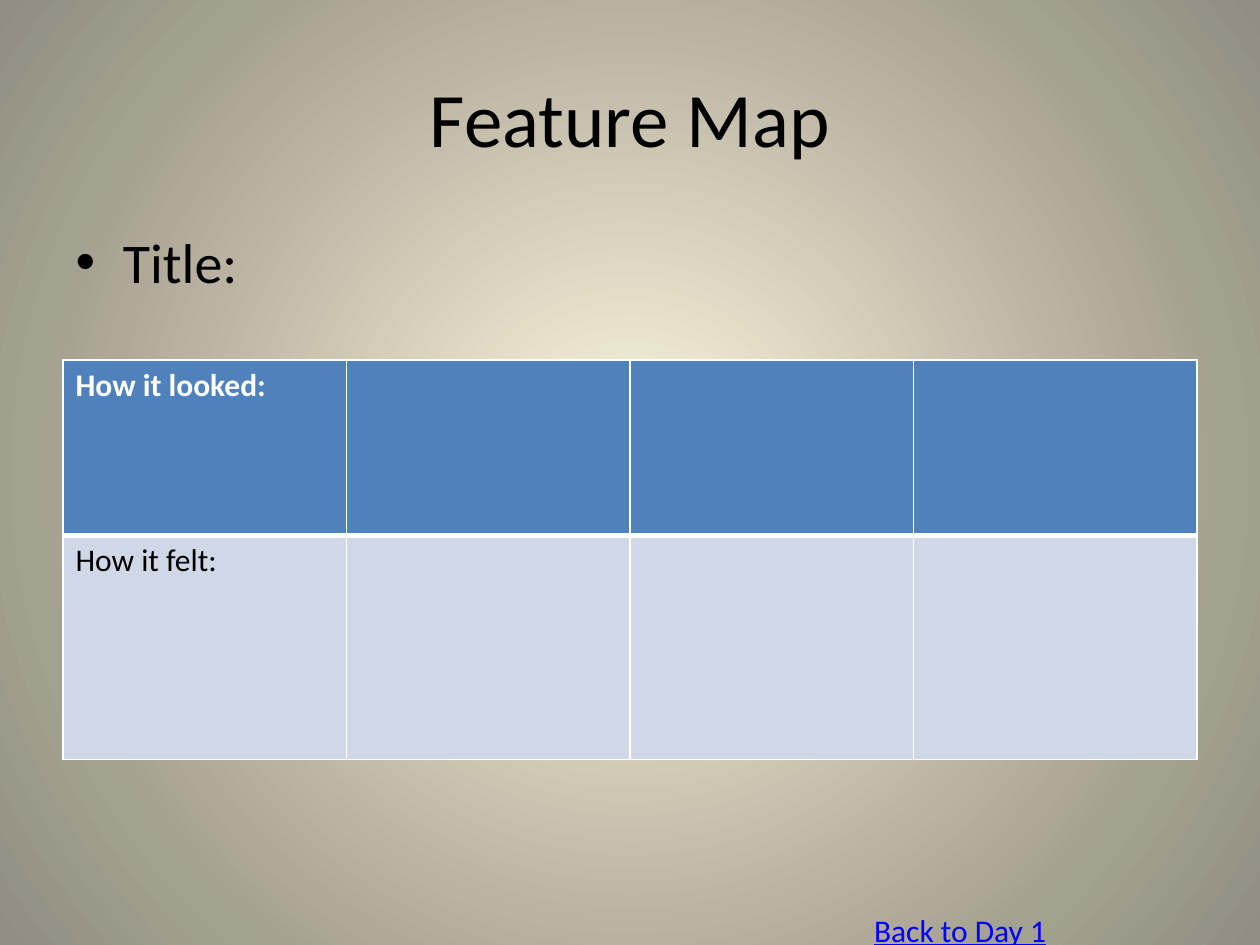
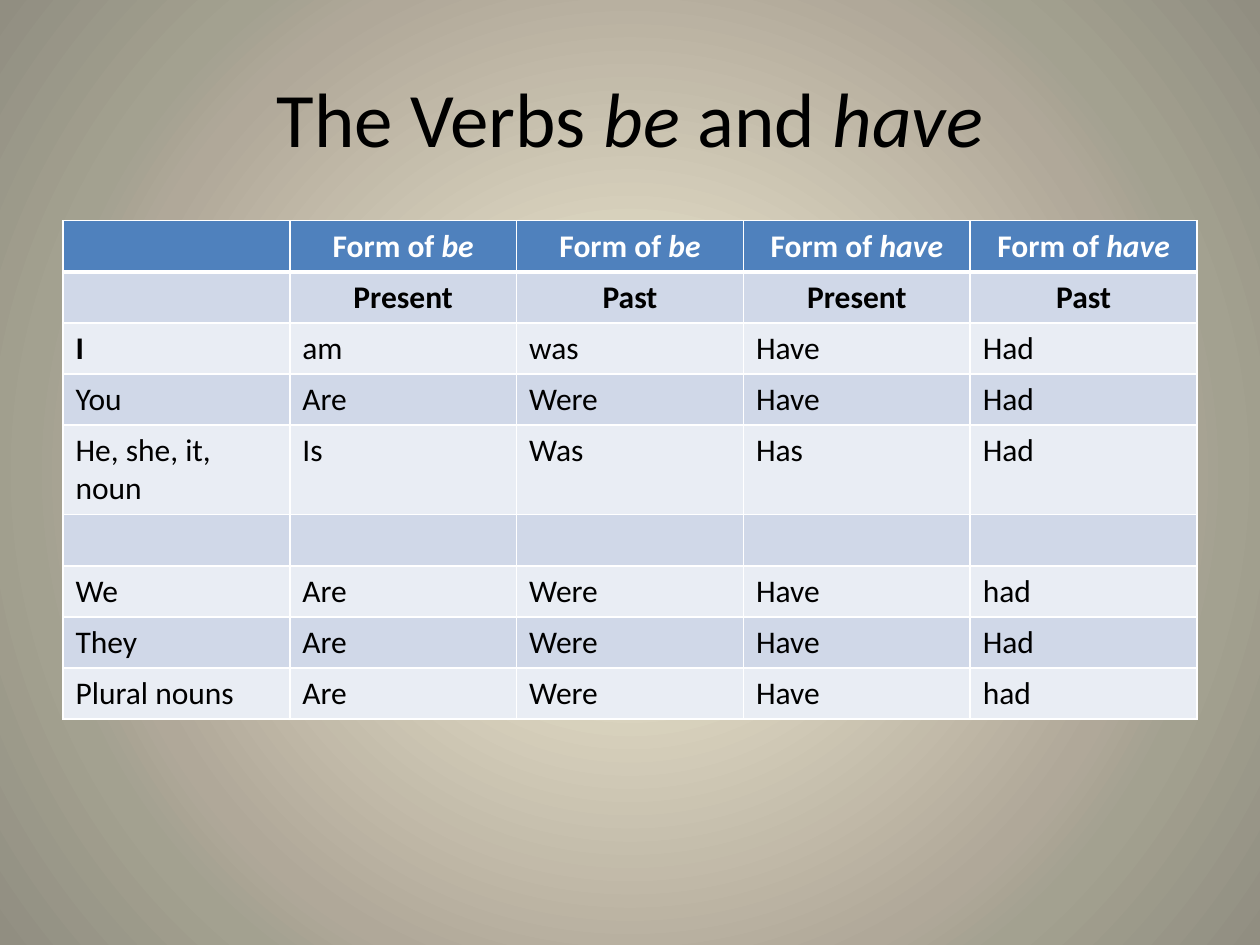
from dataclasses import dataclass

from lxml import etree
from pptx import Presentation
from pptx.dml.color import RGBColor
from pptx.enum import text
from pptx.oxml import ns, parse_xml
from pptx.util import Cm, Pt


@dataclass(frozen=True)
class Theme:
    font: str = "Calibri"
    ink: str = "000000"
    white: str = "FFFFFF"
    link: str = "0000FF"
    head: str = "4F81BD"
    bands: tuple = ("D0D8E8", "E9EDF4")
    glow: tuple = ((0, "FCF7DD"), (67, "B0A899"), (76, "A3A190"), (100, "918E81"))
    title: int = 44
    body: int = 32
    small: int = 18
    thin: int = 1
    thick: int = 3


T = Theme()
LEFT, WIDE = 1.27, 22.86
TITLE = (LEFT, 0.76, WIDE, 3.18)
BODY = (LEFT, 4.45, WIDE, 12.57)

VERBS = [
    ["", "Form of *be*", "Form of *be*", "Form of *have*", "Form of *have*"],
    ["", "Present", "Past", "Present", "Past"],
    ["I", "am", "was", "Have", "Had"],
    ["You", "Are", "Were", "Have", "Had"],
    ["He, she, it, noun", "Is", "Was", "Has", "Had"],
    [""] * 5,
    ["We", "Are", "Were", "Have", "had"],
    ["They", "Are", "Were", "Have", "Had"],
    ["Plural nouns", "Are", "Were", "Have", "had"],
]


def paint(master):
    """Give every slide the same round glow."""
    fill = master.background.fill
    fill.gradient()
    stops = "".join(f'<a:gs pos="{at * 1000}"><a:srgbClr val="{hue}"/></a:gs>'
                    for at, hue in T.glow)
    glow = parse_xml(
        f'<a:gradFill {ns.nsdecls("a")} rotWithShape="1"><a:gsLst>{stops}</a:gsLst>'
        '<a:path path="circle"><a:fillToRect l="50000" t="50000" r="50000" b="50000"/>'
        '</a:path></a:gradFill>')
    old = master.element.find(".//" + ns.qn("p:bg")).find(".//" + ns.qn("a:gradFill"))
    old.getparent().replace(old, glow)


def write(frame, words, size, hue=T.ink, bold=False, line=False, align=None):
    """Write one paragraph; words between stars are italic."""
    para = frame.paragraphs[0]
    para.alignment = align
    for n, part in enumerate(words.split("*")):
        if part:
            run = para.add_run()
            run.text = part
            font = run.font
            font.name, font.size, font.bold = T.font, Pt(size), bold
            font.italic, font.underline = n % 2 == 1, line
            font.color.rgb = RGBColor.from_string(hue)


def place(shape, box):
    shape.left, shape.top, shape.width, shape.height = map(Cm, box)


def head(slide, words):
    shape = slide.shapes.title
    place(shape, TITLE)
    shape.text_frame.vertical_anchor = text.MSO_ANCHOR.MIDDLE
    write(shape.text_frame, words, T.title, align=text.PP_ALIGN.CENTER)


def edge(cell, row):
    """Rule a cell in white, with a heavy line under the header."""
    props = cell._tc.get_or_add_tcPr()
    heavy = {0: "B", 1: "T"}.get(row)
    for n, side in enumerate("LRTB"):
        width = T.thick if side == heavy else T.thin
        rule = etree.Element(ns.qn(f"a:ln{side}"), w=str(Pt(width)))
        fill = etree.SubElement(rule, ns.qn("a:solidFill"))
        etree.SubElement(fill, ns.qn("a:srgbClr"), val=T.white)
        props.insert(n, rule)


def grid(slide, left, top, wide, highs, rows, bold=(), mid=()):
    """Draw a table of equal columns; bold and mid list (row, column) cells."""
    cols = len(rows[0])
    frame = slide.shapes.add_table(len(rows), cols, Cm(left), Cm(top),
                                   Cm(wide), Cm(sum(highs)))
    table = frame.table
    for col in table.columns:
        col.width = Cm(wide / cols)
    for r, (high, row) in enumerate(zip(highs, rows)):
        table.rows[r].height = Cm(high)
        for c, words in enumerate(row):
            cell = table.cell(r, c)
            cell.fill.solid()
            back = T.bands[(r - 1) % 2] if r else T.head
            cell.fill.fore_color.rgb = RGBColor.from_string(back)
            edge(cell, r)
            write(cell.text_frame, words, T.small, T.ink if r else T.white,
                  bold=r == 0 or (r, c) in bold,
                  align=text.PP_ALIGN.CENTER if (r, c) in mid else None)


def back(slide, box, words):
    shape = slide.shapes.add_textbox(*map(Cm, box))
    frame = shape.text_frame
    frame.word_wrap = False
    frame.auto_size = text.MSO_AUTO_SIZE.SHAPE_TO_FIT_TEXT
    write(frame, words, T.small, T.link, line=True)


def feature(deck):
    slide = deck.slides.add_slide(deck.slide_layouts[1])
    head(slide, "Feature Map")
    body = slide.placeholders[1]
    place(body, BODY)
    write(body.text_frame, "Title:", T.body)
    rows = [[words, "", "", ""] for words in ("How it looked:", "How it felt:")]
    grid(slide, LEFT, 7.26, WIDE, (3.53, 4.52), rows)
    back(slide, (17.37, 18.24, 4.5, 1.02), "Back to Day 1")


def verbs(deck):
    slide = deck.slides.add_slide(deck.slide_layouts[5])
    head(slide, "The Verbs *be *and *have*")
    tense = [(1, c) for c in range(5)]
    mid = tense + [(0, c) for c in range(5)]
    grid(slide, LEFT, BODY[1], WIDE, [1.03] * len(VERBS), VERBS,
         bold=tense + [(2, 0)], mid=mid)


def main():
    deck = Presentation()
    deck.slide_width, deck.slide_height = Cm(25.4), Cm(19.05)
    paint(deck.slide_master)
    feature(deck)
    verbs(deck)
    deck.save("out.pptx")


if __name__ == "__main__":
    main()
